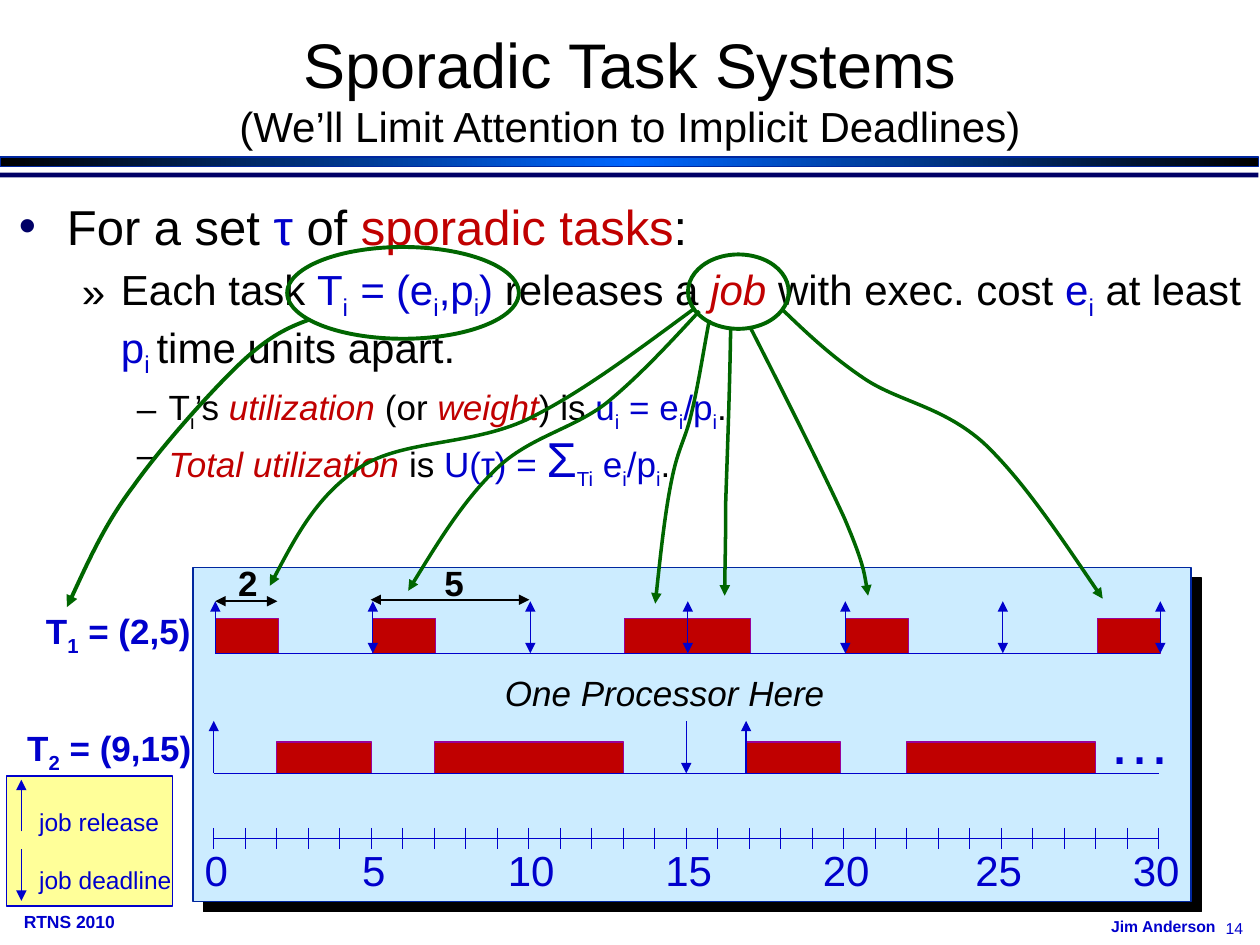
from copy import deepcopy
from pptx import Presentation
from pptx.dml.color import RGBColor as RGB
from pptx.enum.shapes import MSO_CONNECTOR as LINK, MSO_SHAPE as SHAPE
from pptx.enum.text import MSO_ANCHOR as ANCHOR, MSO_AUTO_SIZE as FIT, PP_ALIGN as ALIGN
from pptx.oxml.ns import qn
from pptx.oxml.xmlchemy import OxmlElement as Element
from pptx.util import Cm, Pt

COLORS = {
    "black": "000000", "blue": "0000CC", "navy": "000066", "bright": "0066FF",
    "edge": "00279F", "red": "C00000", "purple": "990099", "green": "006600",
    "yellow": "FFFF99", "sky": "CCECFF",
}
RGBS = {name: RGB.from_string(value) for name, value in COLORS.items()}

prs = Presentation()
prs.slide_width, prs.slide_height = Cm(25.4), Cm(19.05)
slide = prs.slides.add_slide(prs.slide_layouts[6])
shapes = slide.shapes


def style_stroke(stroke, color, width, ends=""):
    """Colour a line; ends names its arrowheads: 'head', 'tail' or both."""
    stroke.line.fill.solid()
    stroke.line.fill.fore_color.rgb = RGBS[color]
    stroke.line.width = Pt(width)
    for end in ends.split():
        arrow = Element(f"a:{end}End")
        arrow.set("type", "triangle")
        stroke.line._get_or_add_ln().append(arrow)
    stroke._element.spPr.append(Element("a:effectLst"))


def write(paragraph, size, pieces):
    """Add (text, colour, flags) pieces; flags: b bold, i italic, _ subscript, + large."""
    for text, color, flags in pieces:
        run = paragraph.add_run()
        run.text = text
        font = run.font
        font.name, font.size = "Arial", Pt(28 if "+" in flags else size)
        font.color.rgb = RGBS[color]
        font.bold, font.italic = "b" in flags, "i" in flags
        if "_" in flags:
            font._element.set("baseline", "-25000")


# Double rule under the title
band = shapes.add_shape(SHAPE.RECTANGLE, 0, Cm(3.16), Cm(25.37), Cm(0.2))
band.fill.gradient()
band.fill.gradient_angle = 0
stop_list = band._element.spPr.find(".//" + qn("a:gsLst"))
stop_list.append(deepcopy(stop_list[-1]))
for stop, position, color in zip(band.fill.gradient_stops, (0, 0.5, 1),
                                 ("black", "bright", "black")):
    stop.position = position
    stop.color.rgb = RGBS[color]
style_stroke(band, "edge", 1)

rule = shapes.add_shape(SHAPE.RECTANGLE, 0, Cm(3.48), Cm(25.37), Cm(0.1))
rule.fill.solid()
rule.fill.fore_color.rgb = RGBS["navy"]
rule.line.fill.background()
rule.shadow.inherit = False

# Title
title = shapes.add_textbox(0, 0, Cm(25.4), Cm(3.17)).text_frame
title.word_wrap = True
title.vertical_anchor = ANCHOR.BOTTOM
heading = title.paragraphs[0]
heading.text = "Sporadic Task Systems\v(We’ll Limit Attention to Implicit Deadlines)"
heading.alignment = ALIGN.CENTER
for run, size in zip(heading.runs, (36, 24)):
    run.font.name, run.font.size = "Arial", Pt(size)
    run.font.color.rgb = RGBS["black"]

# Bulleted text: level, bullet, bullet colour, left margin, hanging, size,
# space before, line spacing, pieces
K, B, R = "black", "blue", "red"
points = [
    (0, "•", "navy", 0.97, 0.97, 28, 5.6, None, [
        ("For a set ", K, ""), ("τ", B, ""), (" of ", K, ""),
        ("sporadic tasks", R, ""), (":", K, "")]),
    (1, "»", K, 2.06, 0.79, 24, 4.8, None, [
        ("Each task ", K, ""), ("T", B, ""), ("i", B, "_"), (" = ", B, "i"),
        ("(e", B, ""), ("i", B, "_"), (",p", B, ""), ("i", B, "_"), (") ", B, ""),
        ("releases a ", K, ""), ("job", R, "i"), (" with exec. cost ", K, ""),
        ("e", B, ""), ("i", B, "_"), (" at least ", K, ""),
        ("p", B, ""), ("i ", B, "_"), ("time units apart.", K, "")]),
    (2, "–", K, 3.02, 0.64, 20, 4, None, [
        ("T", K, ""), ("i", K, "_"), ("’s ", K, ""), ("utilization", R, "i"),
        (" (or ", K, ""), ("weight", R, "i"), (") is ", K, ""),
        ("u", B, ""), ("i", B, "_"), (" = e", B, ""), ("i", B, "_"),
        ("/p", B, ""), ("i", B, "_"), (".", K, "")]),
    (2, "–", K, 3.02, 0.64, 20, 5.6, 0.7, [
        ("Total utilization ", R, "i"), ("is ", K, ""), ("U(τ) = ", B, ""),
        ("Σ", B, "+"), ("Ti", B, "_"), (" e", B, ""), ("i", B, "_"),
        ("/p", B, ""), ("i", B, "_"), (".", K, "")]),
]
body = shapes.add_textbox(Cm(0.13), Cm(3.84), Cm(25.27), Cm(5.79)).text_frame
body.word_wrap = True
for n, (level, bullet, bullet_color, margin, hang, size, before, spacing,
        pieces) in enumerate(points):
    point = body.add_paragraph() if n else body.paragraphs[0]
    point.level = level
    point.space_before = Pt(before)
    if spacing:
        point.line_spacing = spacing
    props = point._p.get_or_add_pPr()
    props.set("marL", str(Cm(margin)))
    props.set("indent", str(-Cm(hang)))
    tint, shade = Element("a:buClr"), Element("a:srgbClr")
    face, mark = Element("a:buFont"), Element("a:buChar")
    shade.set("val", COLORS[bullet_color])
    face.set("typeface", "Arial")
    mark.set("char", bullet)
    tint.append(shade)
    props.extend([tint, face, mark])
    write(point, size, pieces)

# Schedule panel with its hard shadow, and the legend box
for left, top, width, height, fill, edge, weight in [
        (3.89, 11.44, 20.12, 6.73, "sky", "edge", 0.75),
        (0.13, 15.65, 3.35, 2.62, "yellow", "blue", 1)]:
    box = shapes.add_shape(SHAPE.RECTANGLE, Cm(left), Cm(top), Cm(width), Cm(height))
    box.fill.solid()
    box.fill.fore_color.rgb = RGBS[fill]
    style_stroke(box, edge, weight)
    if fill == "sky":
        shadow, shade = Element("a:outerShdw"), Element("a:srgbClr")
        for key, value in (("dist", Pt(8.5)), ("dir", 2700000), ("algn", "tl"), ("rotWithShape", 0)):
            shadow.set(key, str(value))
        shade.set("val", COLORS["black"])
        shadow.append(shade)
        box._element.spPr.find(qn("a:effectLst")).append(shadow)

# Executed jobs of T1 and T2, as (start, length) in time units
UNIT = Cm(19.05) / 30
X1, X2 = Cm(4.34), Cm(4.31)
jobs_1 = [(start, 2) for start in (0, 5, 13, 15, 20, 28)]
jobs_2 = [(2, 3), (7, 6), (16.9, 3), (22, 6)]
for origin, top, height, jobs in ((X1, 12.47, 0.7, jobs_1), (X2, 14.96, 0.64, jobs_2)):
    for start, length in jobs:
        job = shapes.add_shape(SHAPE.RECTANGLE, int(origin + start * UNIT), Cm(top),
                               int(length * UNIT), Cm(height))
        job.fill.solid()
        job.fill.fore_color.rgb = RGBS["red"]
        style_stroke(job, "purple", 0.75)

# Timelines, ticks, release and deadline arrows: x1, y1, x2, y2, colour, width, ends
strokes = [(origin, y, origin + 30 * UNIT, y, "blue", 0.75, "")
           for origin, y in ((X1, 13.17), (X2, 15.59), (X2, 16.91))]
for t in range(31):
    strokes.append((X2 + t * UNIT, 16.69, X2 + t * UNIT, 17.12, "blue", 0.75, ""))
for t in range(0, 31, 5):
    strokes.append((X1 + t * UNIT, 13.17, X1 + t * UNIT, 12.12, "blue", 0.75,
                    "head tail" if t else "tail"))
for t, ends in ((0, "tail"), (15, "head"), (16.9, "tail")):
    strokes.append((X2 + t * UNIT, 15.59, X2 + t * UNIT, 14.53, "blue", 0.75, ends))
strokes += [
    (Cm(0.43), 16.76, Cm(0.43), 15.72, "blue", 0.75, "tail"),
    (Cm(0.43), 18.16, Cm(0.43), 17.12, "blue", 0.75, "head"),
    (X1, 12.12, Cm(5.59), 12.12, "black", 1, "head tail"),
    (Cm(7.47), 12.09, Cm(10.67), 12.09, "black", 1, "head tail"),
]
for x1, y1, x2, y2, color, width, ends in strokes:
    stroke = shapes.add_connector(LINK.STRAIGHT, int(x1), Cm(y1), int(x2), Cm(y2))
    style_stroke(stroke, color, width, ends)

# Rings around the task and the job
for left, top, width, height in ((5.79, 4.98, 4.67, 1.85), (13.87, 5.13, 2.03, 1.5)):
    ring = shapes.add_shape(SHAPE.OVAL, Cm(left), Cm(top), Cm(width), Cm(height))
    ring.fill.background()
    style_stroke(ring, "green", 2.25)

# Curved arrows: width, then a start point and three points per cubic segment
curves = [
    (2.25, [(6.22, 6.45), (5.82, 6.6), (5.44, 6.76), (4.85, 7.32), (4.27, 7.87), (3.28, 8.97),
            (2.69, 9.8), (2.11, 10.57), (1.73, 11.43), (1.35, 12.24)]),
    (2, [(14, 6.22), (12.85, 7.06), (11.73, 7.92), (10.62, 8.46), (9.47, 8.99), (8.13, 8.86),
         (7.26, 9.42), (6.4, 9.98), (5.92, 10.9), (5.44, 11.81)]),
    (2, [(14.1, 6.27), (13.49, 6.93), (12.88, 7.59), (12.22, 8.13), (11.53, 8.66), (10.67, 8.81),
         (10.01, 9.45), (9.35, 10.08), (8.79, 11), (8.23, 11.91)]),
    (2, [(14.73, 6.63), (14.71, 7.92), (14.66, 9.22), (14.63, 10.13), (14.63, 11.02),
         (14.61, 11.51), (14.61, 12.01)]),
    (2, [(15.14, 6.63), (15.88, 8.08), (16.61, 9.55), (17.02, 10.44), (17.4, 11.33),
         (17.45, 11.68), (17.5, 12.01)]),
    (2, [(15.75, 6.22), (16.26, 6.71), (16.76, 7.19), (17.45, 7.65), (18.14, 8.1), (19.02, 8.2),
         (19.84, 8.94), (20.62, 9.68), (21.41, 10.87), (22.23, 12.07)]),
    (2, [(14.3, 6.45), (14.17, 7.14), (14.07, 7.8), (13.94, 8.33), (13.82, 8.86), (13.67, 9.02),
         (13.54, 9.68), (13.41, 10.31), (13.31, 11.23), (13.21, 12.17)]),
]
for width, knots in curves:
    start, *rest = [(Cm(x), Cm(y)) for x, y in knots]
    builder = shapes.build_freeform(*start)
    builder.add_line_segments(rest, close=False)
    curve = builder.convert_to_shape()
    # Join every three straight segments into one cubic segment
    segments = list(curve._element.iter(qn("a:lnTo")))
    for k in range(0, len(segments), 3):
        cubic = Element("a:cubicBezTo")
        segments[k].addprevious(cubic)
        for segment in segments[k:k + 3]:
            cubic.append(segment[0])
            segment.getparent().remove(segment)
    curve.fill.background()
    style_stroke(curve, "green", width, "tail")

# Labels: left, top, width, height, alignment, size, pieces
labels = []
for t in range(0, 31, 5):
    width = 0.99 if t < 10 else 1.45
    center = X1.cm + t * 0.635 + (0.02 if t < 25 else -0.08)
    labels.append((center - width / 2, 16.89, width, 1.27, ALIGN.CENTER, 24, [(str(t), B, "")]))
labels += [
    (4.55, 11.2, 0.91, 1.09, ALIGN.LEFT, 20, [("2", K, "b")]),
    (8.71, 11.2, 0.91, 1.09, ALIGN.LEFT, 20, [("5", K, "b")]),
    (9.93, 13.41, 7.01, 1.12, ALIGN.LEFT, 20, [("One Processor Here", K, "i")]),
    (0.58, 12.17, 3.61, 1.12, ALIGN.CENTER, 20,
     [("T", B, "b"), ("1", B, "b_"), (" = (2,5)", B, "b")]),
    (0.2, 14.53, 4.01, 1.12, ALIGN.CENTER, 20,
     [("T", B, "b"), ("2", B, "b_"), (" = (9,15)", B, "b")]),
    (22.1, 14.02, 1.8, 1.8, ALIGN.LEFT, 36, [("…", B, "")]),
    (0.54, 17.32, 3.2, 0.86, ALIGN.LEFT, 14, [("job deadline", B, "")]),
    (0.54, 16.14, 2.95, 0.86, ALIGN.LEFT, 14, [("job release", B, "")]),
    (22.15, 18.36, 2.64, 0.64, ALIGN.LEFT, 9, [("Jim Anderson", B, "b")]),
    (24.46, 18.39, 0.89, 0.64, ALIGN.LEFT, 9, [("14", B, "")]),
    (0.23, 18.24, 2.36, 0.69, ALIGN.LEFT, 10, [("RTNS 2010", B, "b")]),
]
for left, top, width, height, alignment, size, pieces in labels:
    label = shapes.add_textbox(Cm(left), Cm(top), Cm(width), Cm(height)).text_frame
    label.word_wrap = False
    label.auto_size = FIT.SHAPE_TO_FIT_TEXT
    label.paragraphs[0].alignment = alignment
    write(label.paragraphs[0], size, pieces)

prs.save("out.pptx")
